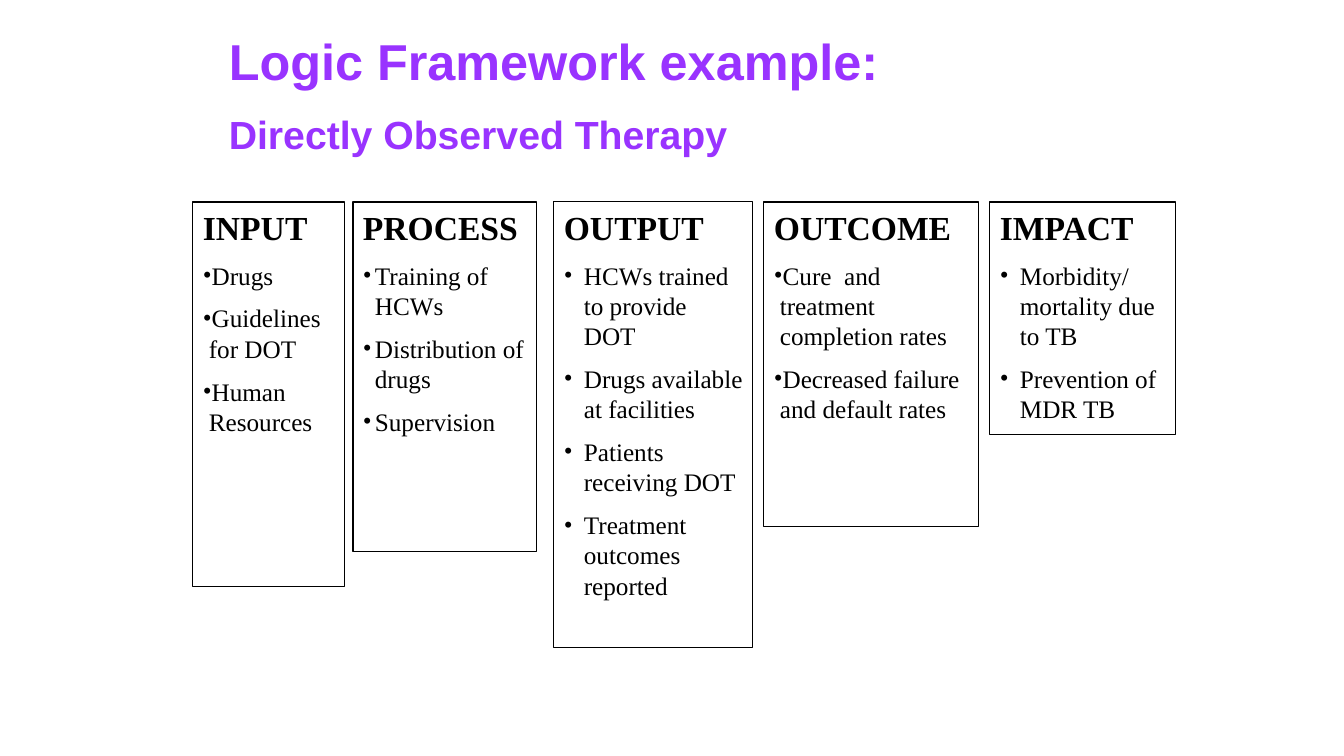
from lxml import etree
from pptx import Presentation
from pptx.dml.color import RGBColor
from pptx.enum.shapes import MSO_SHAPE
from pptx.enum.text import MSO_ANCHOR, PP_ALIGN
from pptx.oxml.ns import qn
from pptx.util import Pt

RECT = MSO_SHAPE.RECTANGLE
TOP = MSO_ANCHOR.TOP
LEFT = PP_ALIGN.LEFT

BLACK = RGBColor(0x00, 0x00, 0x00)
PURPLE = RGBColor(0x99, 0x33, 0xFF)

SCALE = 914400 / 100.8  # EMU in one px
WIDTH, HEIGHT = 1344, 756
BOX_TOP = 202

# Text formats
TITLE = {"name": "Arial", "size": Pt(36), "bold": True}
SUB = {"name": "Arial", "size": Pt(28), "bold": True}
HEAD = {"name": "Times New Roman", "size": Pt(24), "bold": True}
ITEM = {"name": "Times New Roman", "size": Pt(18), "bold": False}

# Stages: left, width, height, bullet indent, heading, items
STAGES = [
    (193, 152, 385, 6, "INPUT",
     ["Drugs", "Guidelines for DOT", "Human Resources"]),
    (353, 184, 350, 12, "PROCESS",
     ["Training of HCWs", "Distribution of drugs", "Supervision"]),
    (554, 199, 446, 20, "OUTPUT",
     ["HCWs trained to provide DOT", "Drugs available at facilities",
      "Patients receiving DOT", "Treatment outcomes reported"]),
    (764, 215, 325, 6, "OUTCOME",
     ["Cure  and treatment completion rates",
      "Decreased failure and default rates"]),
    (990, 186, 233, 20, "IMPACT",
     ["Morbidity/ mortality due to TB", "Prevention of MDR TB"]),
]


def px(num):
    return round(num * SCALE)


def add_text(frame, text, style, color, first=False):
    """Write one paragraph, spaced by half its type size unless first."""
    para = frame.paragraphs[0] if first else frame.add_paragraph()
    para.alignment = LEFT
    if not first:
        para.space_before = style["size"] // 2
    run = para.add_run()
    run.text = text
    for key, value in style.items():
        setattr(run.font, key, value)
    run.font.color.rgb = color
    return para


def add_dot(para, indent):
    """Give the paragraph a round bullet with a hanging indent."""
    props = para._p.get_or_add_pPr()
    props.set("marL", str(px(indent)))
    props.set("indent", str(-px(indent)))
    etree.SubElement(props, qn("a:buFont")).set("typeface", "Times New Roman")
    etree.SubElement(props, qn("a:buChar")).set("char", "•")


def set_frame(shape):
    frame = shape.text_frame
    frame.word_wrap = True
    frame.vertical_anchor = TOP
    return frame


def add_title(slide):
    box = slide.shapes.add_textbox(px(219), px(25), px(906), px(141))
    frame = set_frame(box)
    add_text(frame, "Logic Framework example:", TITLE, PURPLE, first=True)
    add_text(frame, "Directly Observed Therapy", SUB, PURPLE)


def add_stage(slide, left, width, height, indent, head, items):
    box = slide.shapes.add_shape(
        RECT, px(left), px(BOX_TOP), px(width), px(height))
    box.shadow.inherit = False
    box.fill.background()
    box.line.color.rgb = BLACK
    box.line.width = Pt(0.75)
    frame = set_frame(box)
    add_text(frame, head, HEAD, BLACK, first=True)
    for item in items:
        add_dot(add_text(frame, item, ITEM, BLACK), indent)


def main():
    deck = Presentation()
    deck.slide_width, deck.slide_height = px(WIDTH), px(HEIGHT)
    slide = deck.slides.add_slide(deck.slide_layouts[6])

    # Stage boxes, then the title
    for stage in STAGES:
        add_stage(slide, *stage)
    add_title(slide)

    deck.save("out.pptx")


if __name__ == "__main__":
    main()
